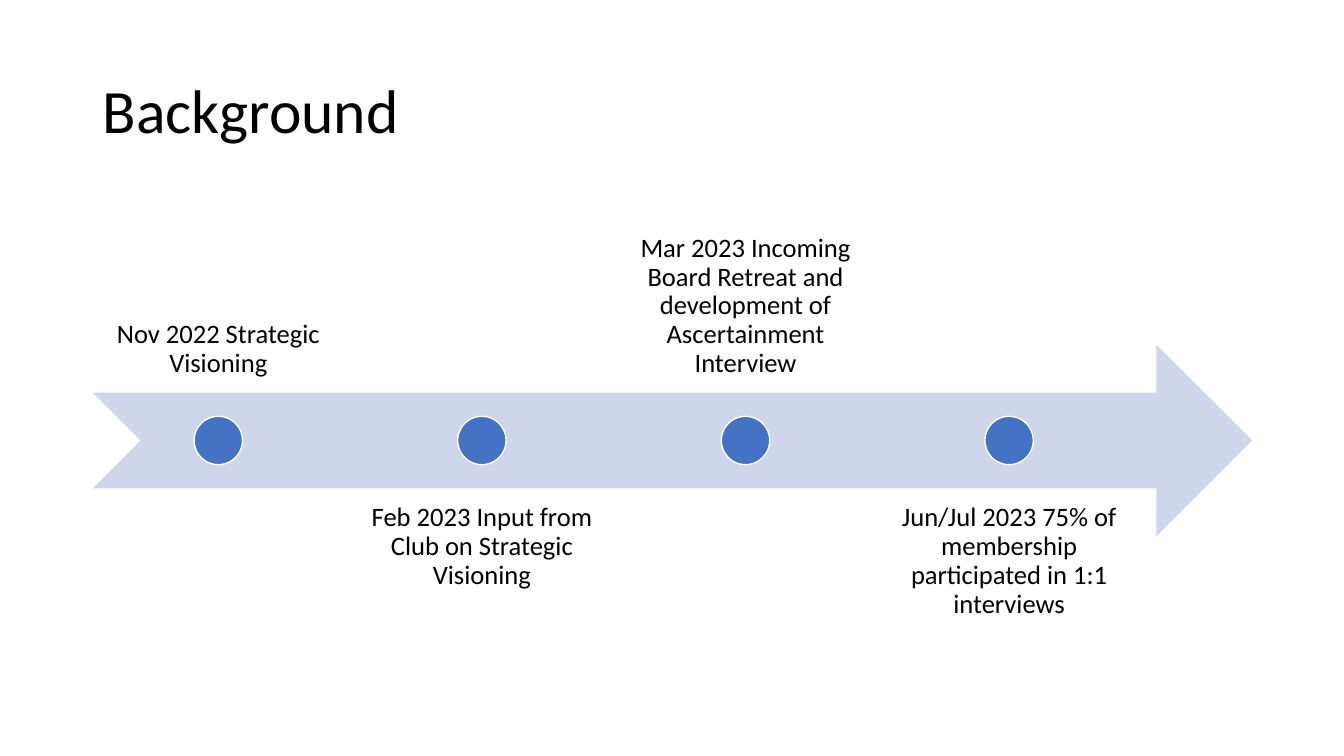
from pptx import Presentation
from pptx.dml.color import RGBColor
from pptx.enum import shapes, text
from pptx.util import Inches, Pt

BLACK = RGBColor(0x00, 0x00, 0x00)
WHITE = RGBColor(0xFF, 0xFF, 0xFF)
PALE_BLUE = RGBColor(0xCF, 0xD5, 0xEA)
BLUE = RGBColor(0x44, 0x72, 0xC4)

LEFT, WIDTH = 0.92, 11.5
BAND_HEIGHT = 1.9
ARROW_TOP = 3.42
LABEL_WIDTH = 2.49
PITCH = LABEL_WIDTH * 1.05
LABEL_TOP_ABOVE, LABEL_TOP_BELOW = 2, 4.85
DOT = 0.48

MILESTONES = [
    "Nov 2022 Strategic Visioning",
    "Feb 2023 Input from Club on Strategic Visioning",
    "Mar 2023 Incoming Board Retreat and development of Ascertainment Interview",
    "Jun/Jul 2023 75% of membership participated in 1:1 interviews",
]


def apply(target, formats):
    for name, value in formats.items():
        setattr(target, name, value)


def add_label(slide, wording, box, size, anchor, align, inset_x, inset_y):
    frame = slide.shapes.add_textbox(*map(Inches, box)).text_frame
    apply(frame, {
        "word_wrap": True,
        "vertical_anchor": anchor,
        "margin_left": Inches(inset_x),
        "margin_right": Inches(inset_x),
        "margin_top": Inches(inset_y),
        "margin_bottom": Inches(inset_y),
    })
    paragraph = frame.paragraphs[0]
    apply(paragraph, {"text": wording, "alignment": align, "line_spacing": 0.9})
    apply(paragraph.runs[0].font, {"name": "Calibri", "size": Pt(size)})
    paragraph.runs[0].font.color.rgb = BLACK


def add_filled(slide, preset, box, color, outline=None):
    figure = slide.shapes.add_shape(preset, *map(Inches, box))
    figure.shadow.inherit = False
    figure.fill.solid()
    figure.fill.fore_color.rgb = color
    if outline is None:
        figure.line.fill.background()
    else:
        figure.line.color.rgb = outline
        figure.line.width = Pt(1)


def add_milestone(slide, index, wording):
    left = LEFT + index * PITCH
    above = index % 2 == 0
    top = LABEL_TOP_ABOVE if above else LABEL_TOP_BELOW
    anchor = text.MSO_ANCHOR.BOTTOM if above else text.MSO_ANCHOR.TOP
    add_label(slide, wording, (left, top, LABEL_WIDTH, BAND_HEIGHT), 19,
              anchor, text.PP_ALIGN.CENTER, 0.15, 0.15)
    dot_left = left + (LABEL_WIDTH - DOT) / 2
    dot_top = ARROW_TOP + (BAND_HEIGHT - DOT) / 2
    add_filled(slide, shapes.MSO_SHAPE.OVAL, (dot_left, dot_top, DOT, DOT), BLUE, WHITE)


def main():
    deck = Presentation()
    apply(deck, {"slide_width": Inches(13.33), "slide_height": Inches(7.5)})
    slide = deck.slides.add_slide(deck.slide_layouts[6])

    # Heading
    add_label(slide, "Background", (LEFT, 0.4, WIDTH, 1.45), 44,
              text.MSO_ANCHOR.MIDDLE, text.PP_ALIGN.LEFT, 0.1, 0.05)

    # Timeline arrow
    add_filled(slide, shapes.MSO_SHAPE.NOTCHED_RIGHT_ARROW,
               (LEFT, ARROW_TOP, WIDTH, BAND_HEIGHT), PALE_BLUE)

    # Milestones, alternating above and below the arrow
    for index, wording in enumerate(MILESTONES):
        add_milestone(slide, index, wording)

    deck.save("out.pptx")


if __name__ == "__main__":
    main()
